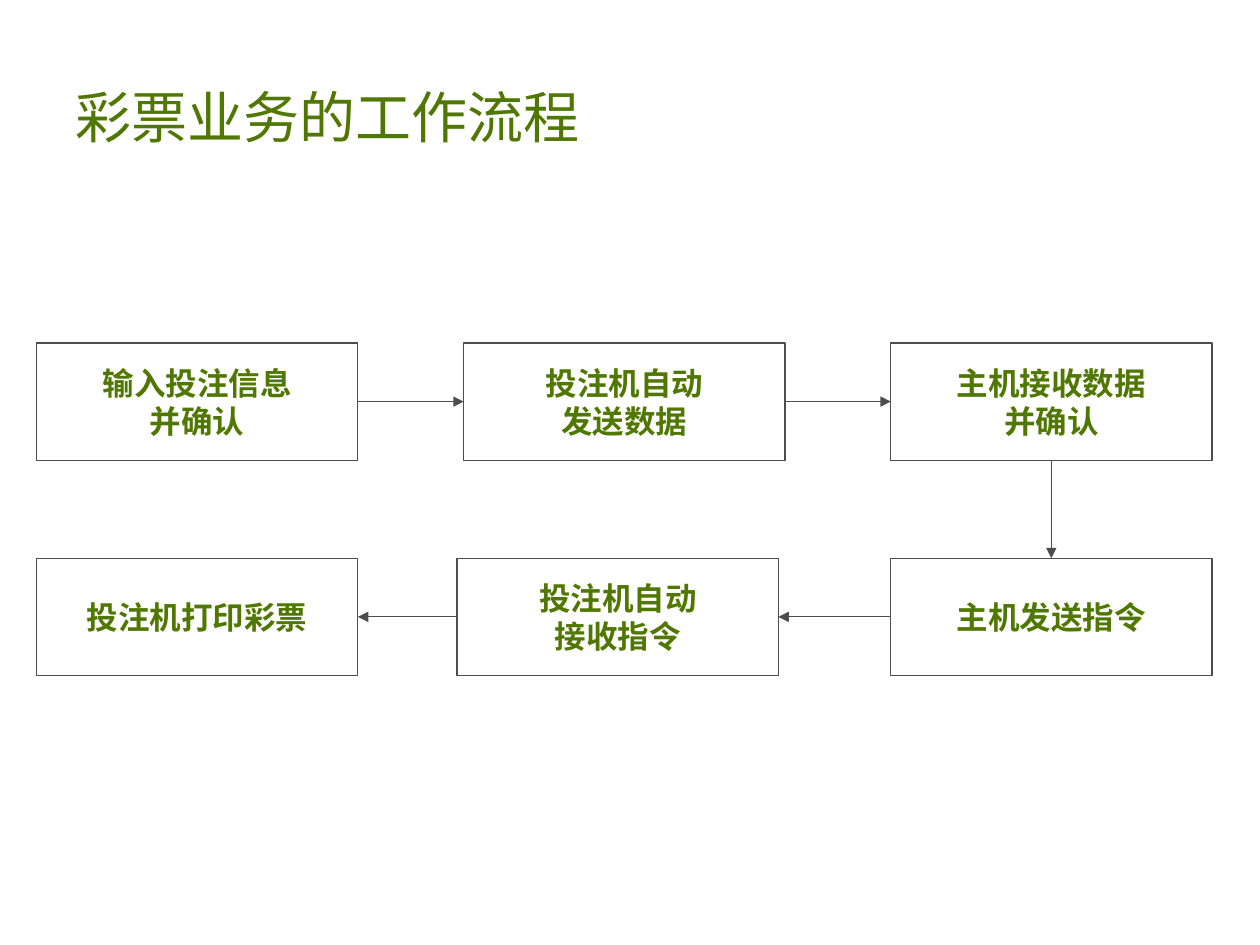
import pptx
import pptx.util
import pptx.dml.color
import pptx.enum.shapes
import pptx.enum.text
import pptx.oxml
import pptx.oxml.ns

Pt = pptx.util.Pt
COLORS = {"text": "507800", "line": "4D4D4D", "background": "FFFFFF"}
CJK_FONT = "Noto Sans CJK SC"
TOP, LEFT, BOTTOM, RIGHT = range(4)


def rgb(name):
    return pptx.dml.color.RGBColor.from_string(COLORS[name])


def add_text(paragraph, text, size, font, bold):
    run = paragraph.add_run()
    run.text = text
    run.font.size = Pt(size)
    run.font.bold = bold
    run.font.name = font
    run.font.color.rgb = rgb("text")
    east_asian = pptx.oxml.parse_xml(
        f'<a:ea {pptx.oxml.ns.nsdecls("a")} typeface="{CJK_FONT}"/>')
    run.font._element.append(east_asian)


deck = pptx.Presentation()
deck.slide_width, deck.slide_height = Pt(720), Pt(540)
slide = deck.slides.add_slide(deck.slide_layouts[6])
slide.background.fill.solid()
slide.background.fill.fore_color.rgb = rgb("background")

title = slide.shapes.add_textbox(Pt(36), Pt(21.6), Pt(648), Pt(90))
title.text_frame.word_wrap = True
title.text_frame.vertical_anchor = pptx.enum.text.MSO_ANCHOR.MIDDLE
add_text(title.text_frame.paragraphs[0], "彩票业务的工作流程", 32, CJK_FONT, False)

step_width, step_height = 183.6, 67
upper, lower = 196, 319
workflow = [
    (20.9, upper, ["输入投注信息", "并确认"]),
    (265, upper, ["投注机自动", "发送数据"]),
    (509, upper, ["主机接收数据", "并确认"]),
    (509, lower, ["主机发送指令"]),
    (261.2, lower, ["投注机自动", "接收指令"]),
    (20.9, lower, ["投注机打印彩票"]),
]

steps = []
for left, top, lines in workflow:
    step = slide.shapes.add_shape(
        pptx.enum.shapes.MSO_SHAPE.RECTANGLE,
        Pt(left), Pt(top), Pt(step_width), Pt(step_height))
    step.shadow.inherit = False
    step.fill.background()
    step.line.color.rgb = rgb("line")
    step.line.width = Pt(0.75)
    frame = step.text_frame
    frame.word_wrap = False
    frame.vertical_anchor = pptx.enum.text.MSO_ANCHOR.MIDDLE
    for index, line in enumerate(lines):
        paragraph = frame.add_paragraph() if index else frame.paragraphs[0]
        paragraph.alignment = pptx.enum.text.PP_ALIGN.CENTER
        add_text(paragraph, line, 18, "Arial", True)
    steps.append(step)

sides = [(RIGHT, LEFT), (RIGHT, LEFT), (BOTTOM, TOP), (LEFT, RIGHT), (LEFT, RIGHT)]
for source, target, (exit_side, entry_side) in zip(steps, steps[1:], sides):
    arrow = slide.shapes.add_connector(
        pptx.enum.shapes.MSO_CONNECTOR.STRAIGHT, 0, 0, 0, 0)
    arrow.begin_connect(source, exit_side)
    arrow.end_connect(target, entry_side)
    arrow.line.color.rgb = rgb("line")
    arrow.line.width = Pt(0.75)
    arrow.line._get_or_add_ln().append(pptx.oxml.parse_xml(
        f'<a:tailEnd {pptx.oxml.ns.nsdecls("a")} type="triangle"/>'))
    arrow._element.spPr.append(pptx.oxml.parse_xml(
        f'<a:effectLst {pptx.oxml.ns.nsdecls("a")}/>'))

deck.save("out.pptx")
